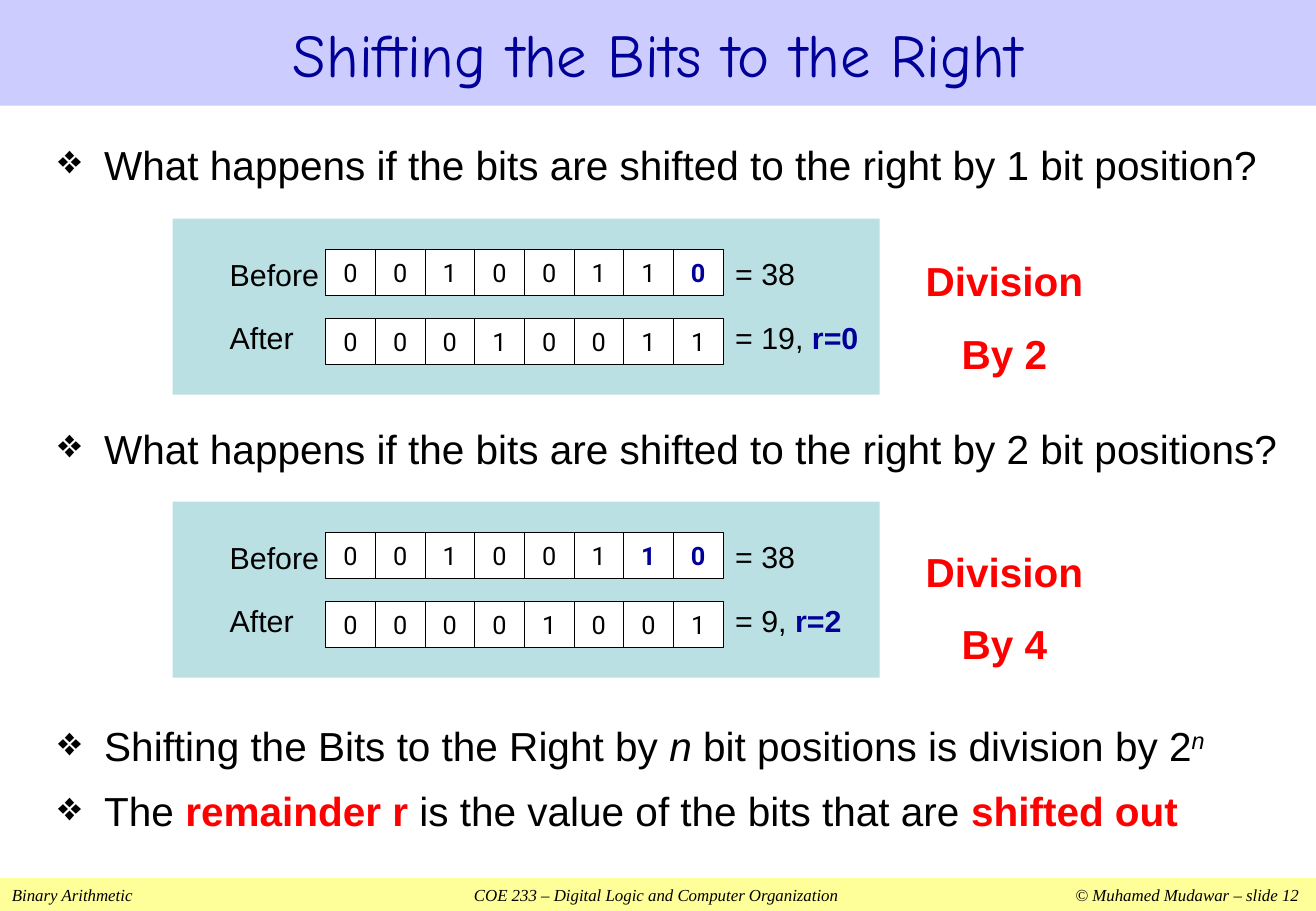
import lxml.etree
import pptx
import pptx.dml.color
import pptx.enum.shapes
import pptx.enum.text
import pptx.oxml.ns
import pptx.util

Inches = pptx.util.Inches
Pt = pptx.util.Pt
ALIGN = pptx.enum.text.PP_ALIGN
ANCHOR = pptx.enum.text.MSO_ANCHOR
RECTANGLE = pptx.enum.shapes.MSO_SHAPE.RECTANGLE
COLORS = {
    "black": "000000", "white": "FFFFFF", "navy": "000099", "red": "FF0000",
    "lavender": "CCCCFF", "yellow": "FFFF99", "teal": "BBE0E3",
}


def color(name):
    return pptx.dml.color.RGBColor.from_string(COLORS[name])


def write_runs(paragraph, runs, size, font="Arial"):
    """Add (text, colour, style) runs; style letters: b bold, i italic, ^ superscript."""
    for text, color_name, style in runs:
        run = paragraph.add_run()
        run.text = text
        run.font.name = font
        run.font.size = Pt(size)
        run.font.bold = "b" in style
        run.font.italic = "i" in style
        run.font.color.rgb = color(color_name)
        if "^" in style:
            run.font._element.set("baseline", "30000")


presentation = pptx.Presentation()
presentation.slide_width = Inches(10.83)
presentation.slide_height = Inches(7.5)
slide = presentation.slides.add_slide(presentation.slide_layouts[5])

# Footer band with centre and right tab stops
footer = slide.shapes.add_shape(RECTANGLE, 0, Inches(7.23), Inches(10.83), Inches(0.27))
footer.shadow.inherit = False
footer.fill.solid()
footer.fill.fore_color.rgb = color("yellow")
footer.line.fill.background()
footer.text_frame.vertical_anchor = ANCHOR.TOP
paragraph = footer.text_frame.paragraphs[0]
paragraph.alignment = ALIGN.LEFT
tab_list = lxml.etree.SubElement(paragraph._p.get_or_add_pPr(), pptx.oxml.ns.qn("a:tabLst"))
for position, alignment in ((5.3, "ctr"), (10.59, "r")):
    lxml.etree.SubElement(tab_list, pptx.oxml.ns.qn("a:tab"),
                          pos=str(Inches(position)), algn=alignment)
footer_text = "Binary Arithmetic\tCOE 233 – Digital Logic and Computer Organization\t© Muhamed Mudawar – slide 12"
write_runs(paragraph, [(footer_text, "black", "i")], 10, "Times New Roman")

# Title band
title = slide.shapes.title
title.left, title.top, title.width, title.height = 0, 0, Inches(10.83), Inches(0.87)
title.fill.solid()
title.fill.fore_color.rgb = color("lavender")
title.text_frame.auto_size = pptx.enum.text.MSO_AUTO_SIZE.NONE
title.text_frame.vertical_anchor = ANCHOR.MIDDLE
paragraph = title.text_frame.paragraphs[0]
paragraph.alignment = ALIGN.CENTER
write_runs(paragraph, [("Shifting the Bits to the Right", "navy", "")], 36, "Comic Neue")

# Bulleted statements
question = "What happens if the bits are shifted to the right by "
bullet_boxes = [
    (1.1, 0.57, [[(question + "1 bit position?", "black", "")]]),
    (3.44, 0.57, [[(question + "2 bit positions?", "black", "")]]),
    (5.89, 1.26, [
        [("Shifting the Bits to the Right by ", "black", ""), ("n", "black", "i"),
         (" bit positions is division by 2", "black", ""), ("n", "black", "i^")],
        [("The ", "black", ""), ("remainder r ", "red", "b"),
         ("is the value of the bits that are ", "black", ""), ("shifted out", "red", "b")],
    ]),
]
for top, height, statements in bullet_boxes:
    frame = slide.shapes.add_textbox(Inches(0.38), Inches(top), Inches(10.27), Inches(height)).text_frame
    frame.word_wrap = True
    for index, runs in enumerate(statements):
        paragraph = frame.paragraphs[0] if index == 0 else frame.add_paragraph()
        properties = paragraph._p.get_or_add_pPr()
        properties.set("marL", str(Inches(0.38)))
        properties.set("indent", str(-Inches(0.38)))
        spacing = lxml.etree.SubElement(properties, pptx.oxml.ns.qn("a:spcBef"))
        lxml.etree.SubElement(spacing, pptx.oxml.ns.qn("a:spcPct"), val="40000")
        lxml.etree.SubElement(properties, pptx.oxml.ns.qn("a:buChar"), char="❖")
        write_runs(paragraph, runs, 24)

# One panel per shift: bit rows before and after, with their values
VALUE = 38
BIT_COUNT = 8
CELL_WIDTH = 3.27 / BIT_COUNT
for shift, panel_top, result_top in ((1, 1.8, 1.86), (2, 4.13, 4.25)):
    divisor = 2 ** shift
    quotient, remainder = divmod(VALUE, divisor)
    group = slide.shapes.add_group_shape()
    panel = group.shapes.add_shape(RECTANGLE, Inches(1.42), Inches(panel_top), Inches(5.82), Inches(1.45))
    panel.shadow.inherit = False
    panel.fill.solid()
    panel.fill.fore_color.rgb = color("teal")
    panel.line.fill.background()

    for number, row_offset, shifted_out in ((VALUE, 0.25, shift), (quotient, 0.82, 0)):
        for column, bit in enumerate(f"{number:0{BIT_COUNT}b}"):
            cell = group.shapes.add_shape(
                RECTANGLE, Inches(2.68 + column * CELL_WIDTH), Inches(panel_top + row_offset),
                Inches(CELL_WIDTH), Inches(0.38))
            cell.shadow.inherit = False
            cell.fill.solid()
            cell.fill.fore_color.rgb = color("white")
            cell.line.color.rgb = color("black")
            cell.line.width = Pt(0.38)
            cell.text_frame.vertical_anchor = ANCHOR.MIDDLE
            paragraph = cell.text_frame.paragraphs[0]
            paragraph.alignment = ALIGN.CENTER
            leaves = column >= BIT_COUNT - shifted_out
            write_runs(paragraph, [(bit, "navy" if leaves else "black", "b" if leaves else "")], 15, "Roboto")

    labels = [
        (1.89, 0.31, 0.74, [("Before", "black", "")]),
        (1.89, 0.83, 0.53, [("After", "black", "")]),
        (6.05, 0.3, 0.5, [(f"= {VALUE}", "black", "")]),
        (6.05, 0.83, 1.07, [(f"= {quotient}, ", "black", ""), (f"r={remainder}", "navy", "b")]),
    ]
    for left, offset, width, runs in labels:
        frame = group.shapes.add_textbox(
            Inches(left), Inches(panel_top + offset), Inches(width), Inches(0.3)).text_frame
        frame.word_wrap = False
        frame.margin_left = frame.margin_right = frame.margin_top = frame.margin_bottom = 0
        write_runs(frame.paragraphs[0], runs, 18)

    frame = slide.shapes.add_textbox(Inches(7.51), Inches(result_top), Inches(1.51), Inches(1.31)).text_frame
    frame.word_wrap = False
    for index, text in enumerate(("Division", f"By {divisor}")):
        paragraph = frame.paragraphs[0] if index == 0 else frame.add_paragraph()
        paragraph.alignment = ALIGN.CENTER
        paragraph.line_spacing = 1.5
        write_runs(paragraph, [(text, "red", "b")], 24)

presentation.save("out.pptx")
